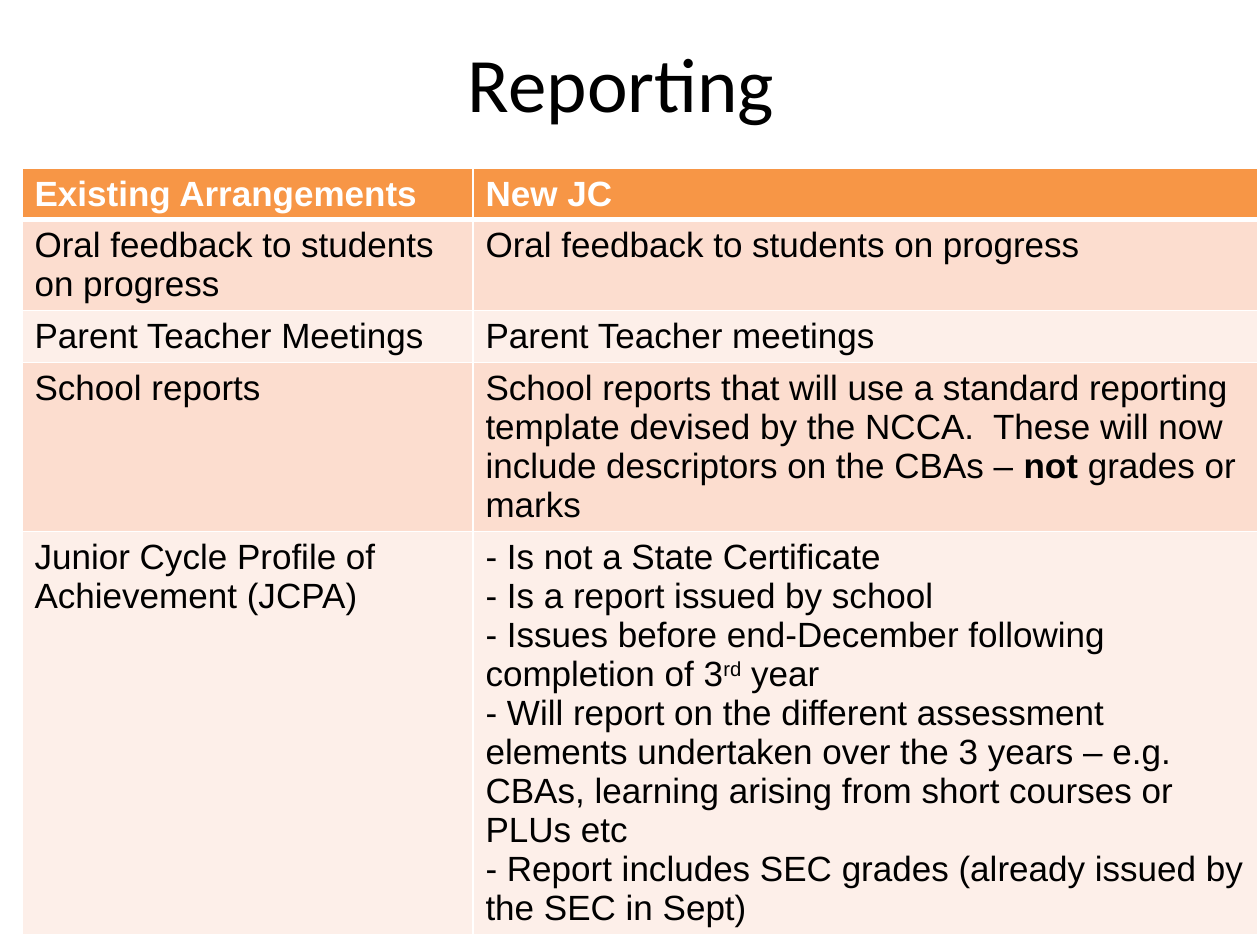
import pptx
import pptx.dml.color
import pptx.enum.text
import pptx.oxml
import pptx.oxml.ns
import pptx.util

RGBColor = pptx.dml.color.RGBColor
WHITE = RGBColor(0xFF, 0xFF, 0xFF)
BLACK = RGBColor(0x00, 0x00, 0x00)
ORANGE = RGBColor(0xF7, 0x96, 0x46)
PEACH = RGBColor(0xFC, 0xDD, 0xCF)
PALE_PEACH = RGBColor(0xFD, 0xEF, 0xE9)

SCALE = 914400 / 126  # EMU per px
SLIDE_WIDTH, SLIDE_HEIGHT = 1260, 945
TITLE_BOX = (63, 3, 1134, 158)
TABLE_BOX = (22, 168, 1236, 765)
COLUMN_WIDTHS = (451, 785)
ROW_HEIGHTS = (51, 91, 52, 168, 403)

TITLE_FORMAT = {"name": "Calibri", "size": pptx.util.Pt(44), "bold": False}
CELL_FORMAT = {"name": "Arial", "size": pptx.util.Pt(20), "bold": False}
HEADER_FORMAT = {**CELL_FORMAT, "bold": True}

# Each cell is a list of paragraphs, each paragraph a list of (text, style) runs
ROWS = [
    ([[("Existing Arrangements", "")]], [[("New JC", "")]]),
    ([[("Oral feedback to students on progress", "")]],
     [[("Oral feedback to students on progress", "")]]),
    ([[("Parent Teacher Meetings", "")]], [[("Parent Teacher meetings", "")]]),
    ([[("School reports", "")]],
     [[("School reports that will use a standard reporting template devised by "
        "the NCCA.  These will now include descriptors on the CBAs – ", ""),
       ("not", "bold"), (" grades or marks", "")]]),
    ([[("Junior Cycle Profile of Achievement (JCPA)", "")]],
     [[("- Is not a State Certificate", "")],
      [("- Is a report issued by school", "")],
      [("- Issues before end-December following completion of 3", ""),
       ("rd", "superscript"), (" year", "")],
      [("- Will report on the different assessment elements undertaken over the "
        "3 years – e.g. CBAs, learning arising from short courses or PLUs etc", "")],
      [("- Report includes SEC grades (already issued by the SEC in Sept)", "")]]),
]


def px(length):
    return pptx.util.Emu(round(length * SCALE))


def format_font(font, values, color):
    for name, value in values.items():
        setattr(font, name, value)
    font.color.rgb = color


def set_borders(cell, bottom_width):
    """Draw white lines round a cell, ahead of its fill in the XML."""
    properties = cell._tc.get_or_add_tcPr()
    for index, side in enumerate("LRTB"):
        width = pptx.util.Pt(bottom_width if side == "B" else 1)
        properties.insert(index, pptx.oxml.parse_xml(
            f'<a:ln{side} {pptx.oxml.ns.nsdecls("a")} w="{width}">'
            f'<a:solidFill><a:srgbClr val="{WHITE}"/></a:solidFill></a:ln{side}>'))


def write_cell(cell, paragraphs, values, color):
    frame = cell.text_frame
    for index, runs in enumerate(paragraphs):
        paragraph = frame.paragraphs[0] if index == 0 else frame.add_paragraph()
        for text, style in runs:
            run = paragraph.add_run()
            run.text = text
            format_font(run.font, values, color)
            if style == "bold":
                run.font.bold = True
            elif style == "superscript":
                run.font._element.set("baseline", "30000")


def add_title(slide, box):
    title = slide.shapes.title
    title.left, title.top, title.width, title.height = map(px, box)
    frame = title.text_frame
    frame.vertical_anchor = pptx.enum.text.MSO_ANCHOR.MIDDLE
    paragraph = frame.paragraphs[0]
    paragraph.alignment = pptx.enum.text.PP_ALIGN.CENTER
    run = paragraph.add_run()
    run.text = "Reporting "
    format_font(run.font, TITLE_FORMAT, BLACK)


def add_comparison_table(slide, box):
    table = slide.shapes.add_table(len(ROWS), len(COLUMN_WIDTHS), *map(px, box)).table
    for column, width in zip(table.columns, COLUMN_WIDTHS):
        column.width = px(width)
    for row, height in zip(table.rows, ROW_HEIGHTS):
        row.height = px(height)

    # Header row, then alternating bands
    for row_index, contents in enumerate(ROWS):
        is_header = row_index == 0
        fill = ORANGE if is_header else PEACH if row_index % 2 else PALE_PEACH
        for column_index, paragraphs in enumerate(contents):
            cell = table.cell(row_index, column_index)
            cell.fill.solid()
            cell.fill.fore_color.rgb = fill
            set_borders(cell, 3 if is_header else 1)
            write_cell(cell, paragraphs, HEADER_FORMAT if is_header else CELL_FORMAT,
                       WHITE if is_header else BLACK)


def main():
    presentation = pptx.Presentation()
    presentation.slide_width = px(SLIDE_WIDTH)
    presentation.slide_height = px(SLIDE_HEIGHT)
    slide = presentation.slides.add_slide(presentation.slide_layouts[5])
    add_title(slide, TITLE_BOX)
    add_comparison_table(slide, TABLE_BOX)
    presentation.save("out.pptx")


if __name__ == "__main__":
    main()
